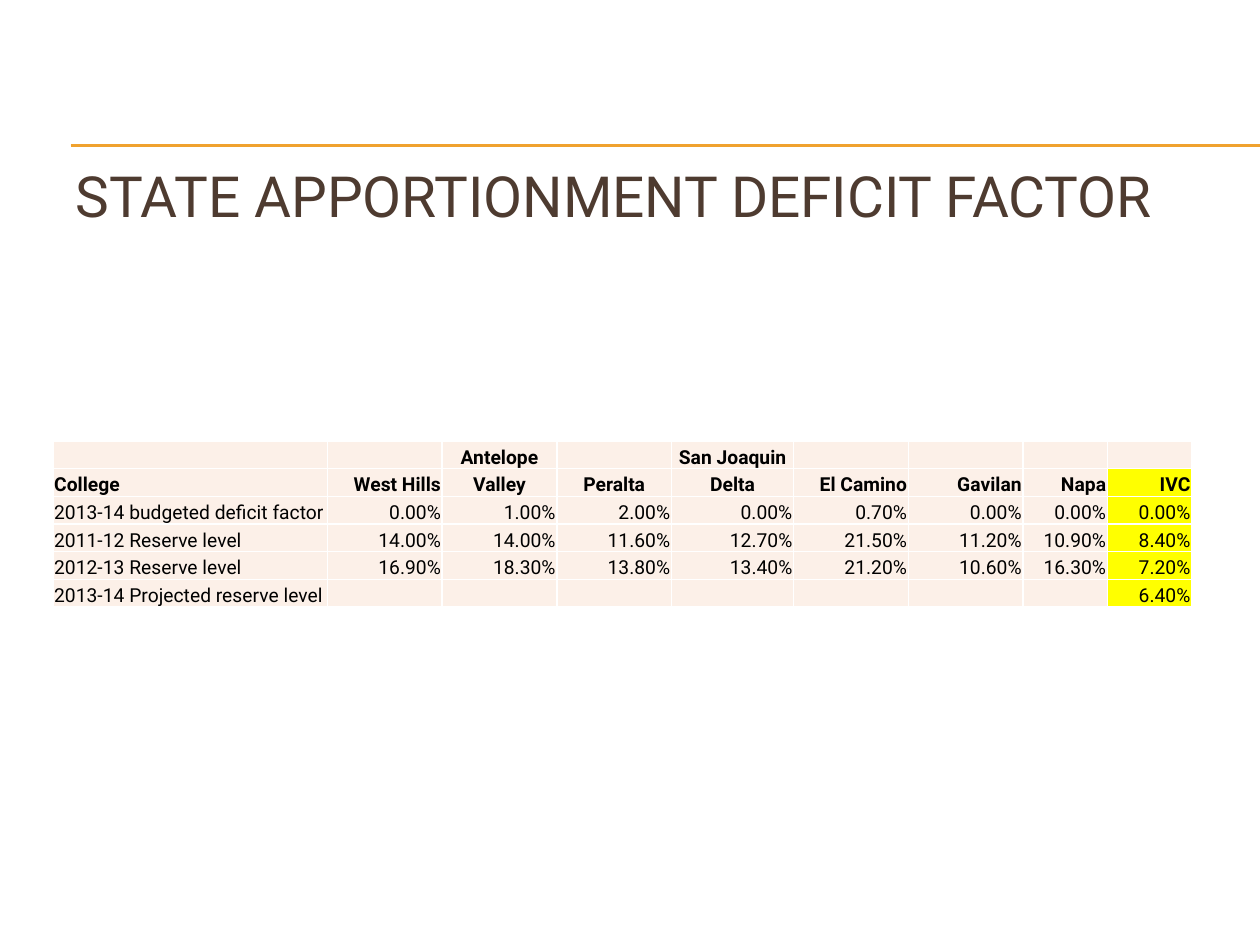
from lxml import etree
from pptx import Presentation
from pptx.dml.color import RGBColor
from pptx.enum.shapes import MSO_CONNECTOR
from pptx.enum.text import MSO_ANCHOR, MSO_AUTO_SIZE, PP_ALIGN
from pptx.oxml.ns import qn
from pptx.util import Inches, Pt

LEFT, CENTER, RIGHT = PP_ALIGN.LEFT, PP_ALIGN.CENTER, PP_ALIGN.RIGHT
MIDDLE, BOTTOM = MSO_ANCHOR.MIDDLE, MSO_ANCHOR.BOTTOM
STRAIGHT = MSO_CONNECTOR.STRAIGHT
NO_AUTOFIT = MSO_AUTO_SIZE.NONE

# Content
TITLE = "STATE APPORTIONMENT DEFICIT FACTOR"
HEADER_ROWS = 2
ROWS = [
    ["", "", "Antelope", "", "San Joaquin", "", "", "", ""],
    ["College", "West Hills", "Valley", "Peralta", "Delta",
     "El Camino", "Gavilan", "Napa", "IVC"],
    ["2013-14 budgeted deficit factor", "0.00%", "1.00%", "2.00%", "0.00%",
     "0.70%", "0.00%", "0.00%", "0.00%"],
    ["2011-12 Reserve level", "14.00%", "14.00%", "11.60%", "12.70%",
     "21.50%", "11.20%", "10.90%", "8.40%"],
    ["2012-13 Reserve level", "16.90%", "18.30%", "13.80%", "13.40%",
     "21.20%", "10.60%", "16.30%", "7.20%"],
    ["2013-14 Projected reserve level", "", "", "", "", "", "", "", "6.40%"],
]
COLUMN_WIDTHS = [2.18, 0.91, 0.91, 0.91, 0.97, 0.91, 0.91, 0.67, 0.67]
CENTERED_HEADERS = (2, 3, 4)
ROW_HEIGHT = 0.22
RULE_HEIGHTS = (1.15, 1.16)

THEME = {
    "font": "Roboto", "title_size": 32.4, "table_size": 11,
    "title": "4E3B30", "text": "000000", "rule": "F0A22E",
    "cell": "FCF0E8", "highlight": "FFFF00", "border": "FFFFFF",
}


def color(name):
    return RGBColor.from_string(THEME[name])


def write(tf, text, size, ink="text", bold=False, align=LEFT):
    p = tf.paragraphs[0]
    p.alignment = align
    if not text:
        # Keeps an empty cell as low as a filled one
        etree.SubElement(p._p, qn("a:endParaRPr"), sz=str(size * 100))
        return
    r = p.add_run()
    r.text = text
    r.font.name = THEME["font"]
    r.font.size = Pt(size)
    r.font.bold = bold
    r.font.color.rgb = color(ink)


def add_borders(cell):
    tc_pr = cell._tc.get_or_add_tcPr()
    for side in ("a:lnL", "a:lnR", "a:lnT", "a:lnB"):
        ln = etree.SubElement(tc_pr, qn(side), w=str(Pt(1)))
        fill = etree.SubElement(ln, qn("a:solidFill"))
        etree.SubElement(fill, qn("a:srgbClr"), val=THEME["border"])


def add_rule(s, y):
    line = s.shapes.add_connector(STRAIGHT, Inches(0.56), Inches(y), Inches(10), Inches(y))
    line.line.color.rgb = color("rule")
    line.line.width = Pt(0.75)
    etree.SubElement(line._element.spPr, qn("a:effectLst"))


def add_title(s):
    sp = s.shapes.title
    sp.left, sp.top, sp.width, sp.height = map(Inches, (0.5, 0.92, 9, 1.25))
    tf = sp.text_frame
    tf.word_wrap = True
    tf.auto_size = NO_AUTOFIT
    tf.vertical_anchor = MIDDLE
    write(tf, TITLE, THEME["title_size"], ink="title")


def add_reserve_table(s):
    table = s.shapes.add_table(
        len(ROWS), len(COLUMN_WIDTHS), Inches(0.42), Inches(3.5),
        Inches(sum(COLUMN_WIDTHS)), Inches(ROW_HEIGHT * len(ROWS))).table
    for column, width in zip(table.columns, COLUMN_WIDTHS):
        column.width = Inches(width)

    last = len(COLUMN_WIDTHS) - 1
    for i, values in enumerate(ROWS):
        table.rows[i].height = Inches(ROW_HEIGHT)
        header = i < HEADER_ROWS
        for j, value in enumerate(values):
            cell = table.cell(i, j)
            cell.margin_left = cell.margin_right = cell.margin_top = Inches(0.01)
            cell.margin_bottom = 0
            cell.vertical_anchor = BOTTOM
            add_borders(cell)
            cell.fill.solid()
            cell.fill.fore_color.rgb = color("highlight" if j == last and i > 0 else "cell")
            if j == 0:
                align = LEFT
            else:
                align = CENTER if header and j in CENTERED_HEADERS else RIGHT
            write(cell.text_frame, value, THEME["table_size"], bold=header, align=align)


def main():
    prs = Presentation()
    prs.slide_width, prs.slide_height = Inches(10), Inches(7.5)
    s = prs.slides.add_slide(prs.slide_layouts[5])
    for y in RULE_HEIGHTS:
        add_rule(s, y)
    add_title(s)
    add_reserve_table(s)
    prs.save("out.pptx")


if __name__ == "__main__":
    main()
